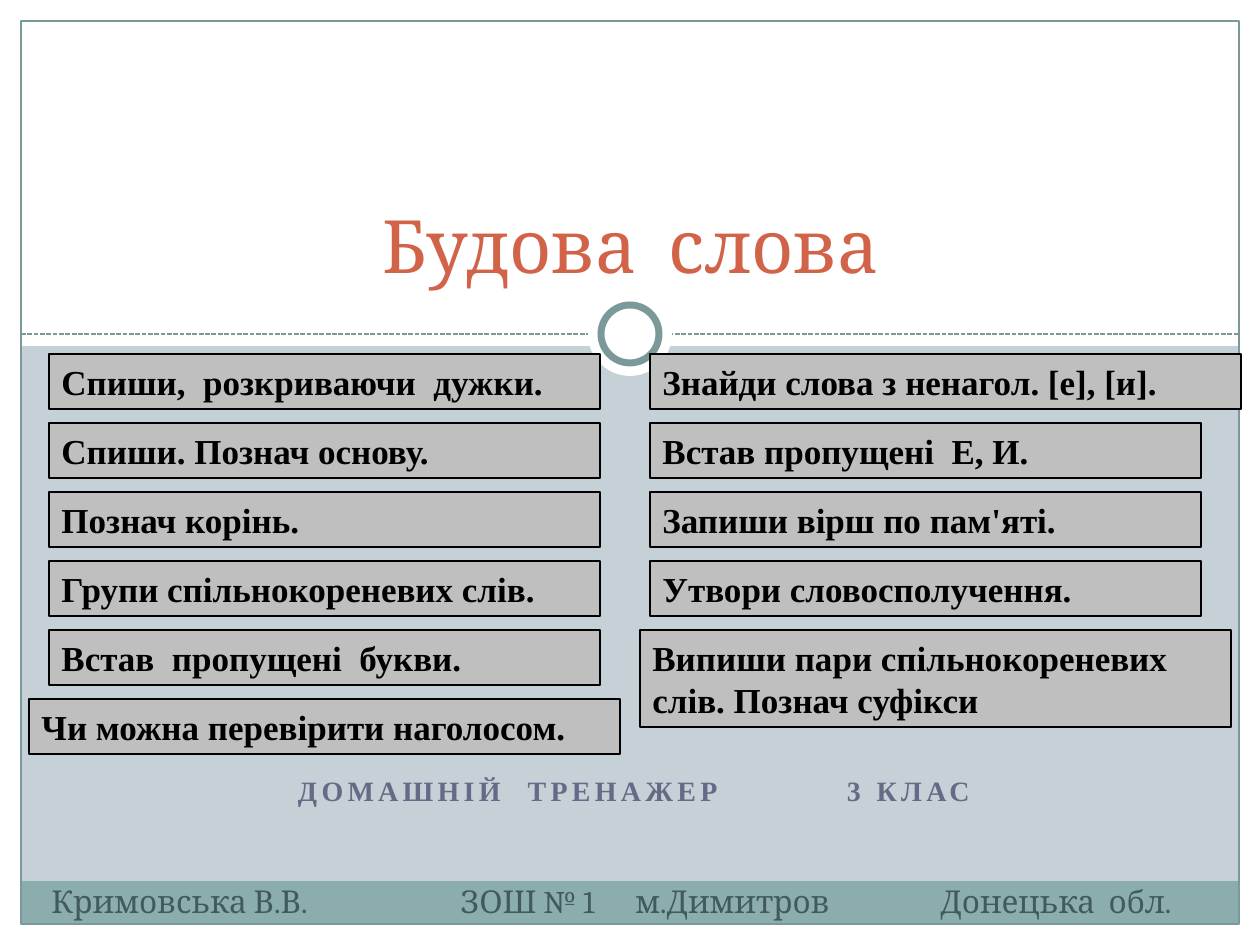
from dataclasses import dataclass

from lxml.etree import SubElement
from pptx import Presentation
from pptx.dml.color import RGBColor
from pptx.enum.dml import MSO_LINE
from pptx.enum.shapes import MSO_CONNECTOR, MSO_SHAPE
from pptx.enum.text import MSO_ANCHOR, PP_ALIGN
from pptx.oxml.ns import qn
from pptx.util import Emu, Inches, Pt

PX = Inches(1) / 126


@dataclass(frozen=True)
class Theme:
    background: str = "C5D1D7"
    white: str = "FFFFFF"
    band: str = "8CADAE"
    rule: str = "7C999A"
    title: str = "D16349"
    subtitle: str = "646B86"
    footer: str = "415B5C"
    button: str = "BFBFBF"
    ink: str = "000000"
    heading_font: str = "Cambria"
    body_font: str = "Times New Roman"
    title_size: int = 42
    button_size: int = 20
    footer_size: int = 18
    subtitle_size: int = 16


THEME = Theme()


def px(*lengths):
    return [Emu(round(length * PX)) for length in lengths]


def color(code):
    return RGBColor.from_string(code)


def add_block(slide, box, fill=None, line=None, width=0.75, kind=MSO_SHAPE.RECTANGLE):
    shape = slide.shapes.add_shape(kind, *px(*box))
    shape.shadow.inherit = False
    if fill:
        shape.fill.solid()
        shape.fill.fore_color.rgb = color(fill)
    else:
        shape.fill.background()
    if line:
        shape.line.color.rgb = color(line)
        shape.line.width = Pt(width)
    else:
        shape.line.fill.background()
    return shape


def write(shape, text, font, size, ink, bold=False, align=PP_ALIGN.LEFT, anchor=MSO_ANCHOR.TOP):
    frame = shape.text_frame
    frame.text = text
    frame.word_wrap = True
    frame.vertical_anchor = anchor
    paragraph = frame.paragraphs[0]
    paragraph.alignment = align
    for run in paragraph.runs:
        run.font.name = font
        run.font.size = Pt(size)
        run.font.bold = bold
        run.font.color.rgb = color(ink)
    return paragraph


def set_tabs(paragraph, stops):
    """Add left tab stops, in px from the start of the text."""
    tab_list = SubElement(paragraph._p.get_or_add_pPr(), qn("a:tabLst"))
    for position in px(*stops):
        SubElement(tab_list, qn("a:tab"), pos=str(int(position)), algn="l")


def add_circle(slide, center, diameter, line=None):
    x, y = center
    box = (x - diameter / 2, y - diameter / 2, diameter, diameter)
    add_block(slide, box, THEME.white, line, 4, MSO_SHAPE.OVAL)


def add_backdrop(slide, box):
    """Draw the white margins, bottom band, frame, dashed rule and ring."""
    left, top, width, height = box
    margin, rule_y = 21, top + 334
    right, bottom = left + width, top + height
    for white_box in (
        (left, bottom - margin, width, margin),
        (right - margin, top, margin, height),
        (left, top, margin, height),
        (left, top, width, 346),
    ):
        add_block(slide, white_box, THEME.white)
    inner = width - 2 * margin
    add_block(slide, (left + margin, bottom - margin - 43, inner, 43), THEME.band)
    rule = slide.shapes.add_connector(
        MSO_CONNECTOR.STRAIGHT, *px(left + margin, rule_y, right - margin, rule_y))
    rule.line.color.rgb = color(THEME.rule)
    rule.line.width = Pt(0.9)
    rule.line.dash_style = MSO_LINE.SQUARE_DOT
    SubElement(rule._element.spPr, qn("a:effectLst"))
    add_block(slide, (left + margin, top + margin, inner, height - 2 * margin), line=THEME.rule)
    center = (left + width / 2, rule_y)
    add_circle(slide, center, 84)
    add_circle(slide, center, 58, THEME.rule)


def add_title(slide, box, text):
    """Fill the title placeholder and bring it in front of the backdrop."""
    title = slide.shapes.title
    title.left, title.top, title.width, title.height = px(*box)
    write(title, text, THEME.heading_font, THEME.title_size, THEME.title,
          align=PP_ALIGN.CENTER, anchor=MSO_ANCHOR.BOTTOM)
    slide.shapes._spTree.append(title._element)


def add_subtitle(slide, box, parts):
    subtitle = slide.shapes.add_textbox(*px(*box))
    subtitle.text_frame.margin_left = px(239)[0]
    paragraph = write(subtitle, "\t".join(parts), THEME.body_font, THEME.subtitle_size,
                      THEME.subtitle, bold=True)
    paragraph.space_before = Pt(3)
    set_tabs(paragraph, [549])
    for run in paragraph.runs:
        run.font._element.set("spc", "250")


def add_footer(slide, box, parts):
    footer = slide.shapes.add_textbox(*px(*box))
    paragraph = write(footer, "\t".join(parts), THEME.heading_font, THEME.footer_size,
                      THEME.footer)
    set_tabs(paragraph, [409, 584, 889])


def add_button_column(slide, origin, buttons):
    """Stack buttons at an even pitch; each is (text, x offset, width, height)."""
    left, top = origin
    pitch = 69
    for row, (text, offset, width, height) in enumerate(buttons):
        box = (left + offset, top + row * pitch, width, height)
        button = add_block(slide, box, THEME.button, THEME.ink)
        write(button, text, THEME.body_font, THEME.button_size, THEME.ink, bold=True)


def main():
    presentation = Presentation()
    presentation.slide_width, presentation.slide_height = Inches(10), Inches(7.5)
    slide = presentation.slides.add_slide(presentation.slide_layouts[5])
    slide.background.fill.solid()
    slide.background.fill.fore_color.rgb = color(THEME.background)

    add_backdrop(slide, (0, 0, 1260, 945))
    add_subtitle(slide, (59, 767, 1152, 74), ["ДОМАШНІЙ  ТРЕНАЖЕР", "3 КЛАС"])
    add_title(slide, (95, 53, 1071, 242), "Будова  слова")
    add_footer(slide, (39, 876, 1201, 50),
               ["Кримовська В.В.", "ЗОШ № 1", "м.Димитров", "Донецька  обл."])

    normal, wide = (0, 551, 55), (0, 591, 55)
    add_button_column(slide, (49, 354), [
        ("Спиши,  розкриваючи  дужки.", *normal),
        ("Спиши. Познач основу.", *normal),
        ("Познач корінь.", *normal),
        ("Групи спільнокореневих слів.", *normal),
        ("Встав  пропущені  букви.", *normal),
        ("Чи можна перевірити наголосом.", -20, 591, 55),
    ])
    add_button_column(slide, (650, 354), [
        ("Знайди слова з ненагол. [е], [и].", *wide),
        ("Встав пропущені  Е, И.", *normal),
        ("Запиши вірш по пам'яті.", *normal),
        ("Утвори словосполучення.", *normal),
        ("Випиши пари спільнокореневих слів. Познач суфікси", -10, 591, 97),
    ])
    presentation.save("out.pptx")


if __name__ == "__main__":
    main()
